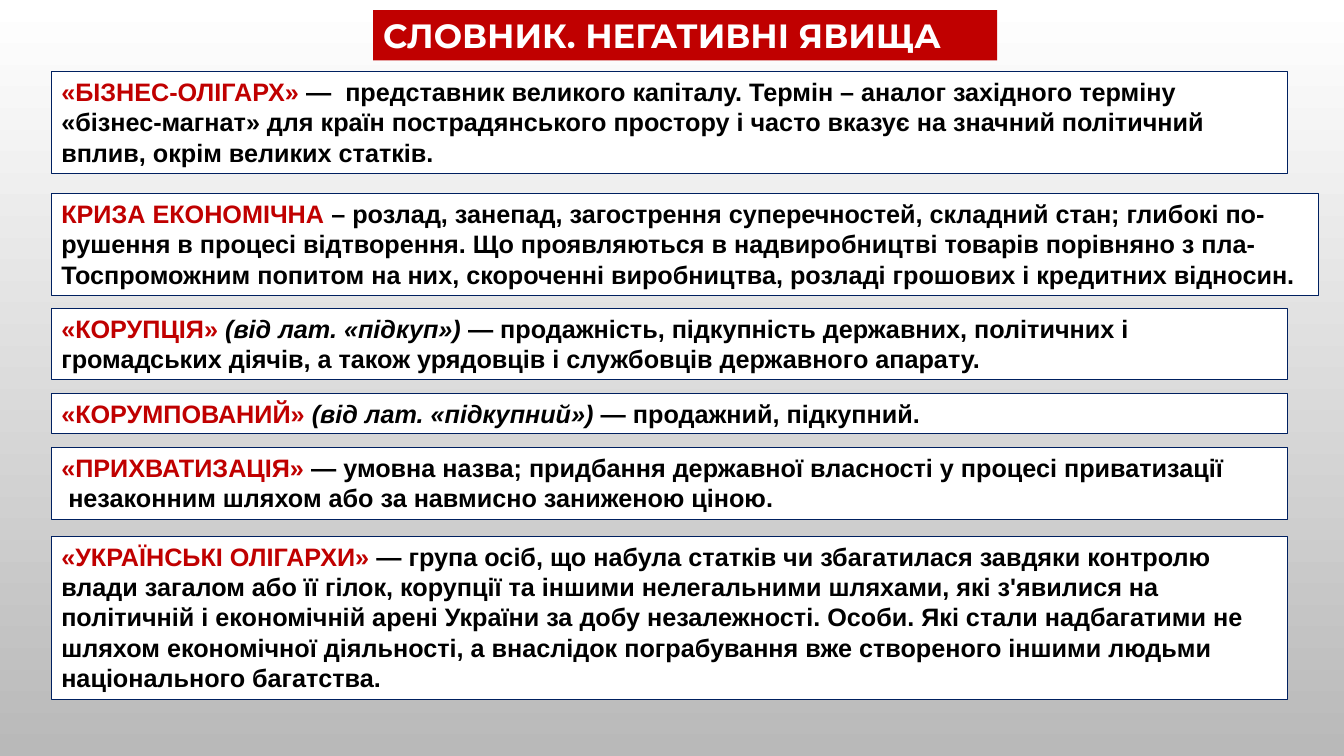
from dataclasses import dataclass

import pptx
import pptx.dml.color
import pptx.enum.shapes
import pptx.enum.text
import pptx.util

Inches = pptx.util.Inches
RGB = pptx.dml.color.RGBColor
WHITE = RGB(0xFF, 0xFF, 0xFF)
BLACK = RGB(0, 0, 0)
GREY = RGB(0xB9, 0xB9, 0xB9)
RED = RGB(0xC0, 0, 0)
NAVY = RGB(0, 0x20, 0x60)

LEFT = 0.51
WIDE = 12.26


@dataclass
class Entry:
    top: float
    high: float
    term: str
    lines: list[str]
    note: str = ""
    wide: float = WIDE


ENTRIES = [
    Entry(0.71, 1.01, "«БІЗНЕС-ОЛІГАРХ» ", [
        "—  представник великого капіталу. Термін – аналог західного терміну "
        "«бізнес-магнат» для країн пострадянського простору і часто вказує на "
        "значний політичний вплив, окрім великих статків."]),
    Entry(1.92, 1.01, "КРИЗА ЕКОНОМІЧНА ", [
        "– розлад, занепад, загострення суперечностей, складний стан; глибокі по-",
        "рушення в процесі відтворення. Що проявляються в надвиробництві "
        "товарів порівняно з пла-",
        "Тоспроможним попитом на них, скороченні виробництва, розладі "
        "грошових і кредитних відносин."], wide=12.57),
    Entry(3.06, 0.71, "«КОРУПЦІЯ» ", [
        "— продажність, підкупність державних, політичних і громадських "
        "діячів, а також урядовців і службовців державного апарату."],
        note="(від лат. «підкуп») "),
    Entry(3.9, 0.4, "«КОРУМПОВАНИЙ» ", ["— продажний, підкупний."],
          note="(від лат. «підкупний») "),
    Entry(4.44, 0.71, "«ПРИХВАТИЗАЦІЯ» ", [
        "— умовна назва; придбання державної власності у процесі приватизації",
        " незаконним шляхом або за навмисно заниженою ціною."]),
    Entry(5.32, 1.62, "«УКРАЇНСЬКІ ОЛІГАРХИ» ", [
        "— група осіб, що набула статків чи збагатилася завдяки контролю влади "
        "загалом або її гілок, корупції та іншими нелегальними шляхами, які "
        "з'явилися на політичній і економічній арені України за добу "
        "незалежності. Особи. Які стали надбагатими не шляхом економічної "
        "діяльності, а внаслідок пограбування вже створеного іншими людьми "
        "національного багатства."]),
]


def set_frame(frame) -> None:
    form = {
        "word_wrap": True,
        "auto_size": pptx.enum.text.MSO_AUTO_SIZE.NONE,
        "vertical_anchor": pptx.enum.text.MSO_ANCHOR.TOP,
        "margin_left": Inches(0.1), "margin_right": Inches(0.1),
        "margin_top": Inches(0.05), "margin_bottom": Inches(0.05),
    }
    for key, value in form.items():
        setattr(frame, key, value)


def add_run(para, text: str, color: RGB, face: str = "Arial",
            size: int = 18, slant: bool = False) -> None:
    run = para.add_run()
    run.text = text
    form = {"name": face, "size": pptx.util.Pt(size), "bold": True, "italic": slant}
    for key, value in form.items():
        setattr(run.font, key, value)
    run.font.color.rgb = color
    para.alignment = pptx.enum.text.PP_ALIGN.LEFT


def set_back(slide) -> None:
    fill = slide.background.fill
    fill.gradient()
    fill.gradient_angle = 270
    for stop, color in zip(fill.gradient_stops, (WHITE, GREY)):
        stop.color.rgb = color


def set_title(slide, text: str) -> None:
    title = slide.shapes.title
    place = {"left": 3.7, "top": 0.1, "width": 6.19, "height": 0.5}
    for key, value in place.items():
        setattr(title, key, Inches(value))
    title.fill.solid()
    title.fill.fore_color.rgb = RED
    set_frame(title.text_frame)
    add_run(title.text_frame.paragraphs[0], text, WHITE, "Montserrat", 24)


def add_entry(slide, entry: Entry) -> None:
    box = slide.shapes.add_shape(
        pptx.enum.shapes.MSO_SHAPE.RECTANGLE, Inches(LEFT), Inches(entry.top),
        Inches(entry.wide), Inches(entry.high))
    box.shadow.inherit = False
    box.fill.solid()
    box.fill.fore_color.rgb = WHITE
    box.line.color.rgb = NAVY
    box.line.width = pptx.util.Pt(0.75)
    frame = box.text_frame
    set_frame(frame)
    para = frame.paragraphs[0]
    add_run(para, entry.term, RED)
    if entry.note:
        add_run(para, entry.note, BLACK, slant=True)
    add_run(para, entry.lines[0], BLACK)
    for line in entry.lines[1:]:
        add_run(frame.add_paragraph(), line, BLACK)


def main() -> None:
    deck = pptx.Presentation()
    deck.slide_width = Inches(13.33)
    deck.slide_height = Inches(7.5)
    slide = deck.slides.add_slide(deck.slide_layouts[5])
    set_back(slide)
    set_title(slide, "СЛОВНИК. НЕГАТИВНІ ЯВИЩА")
    # Glossary boxes
    for entry in ENTRIES:
        add_entry(slide, entry)
    deck.save("out.pptx")


if __name__ == "__main__":
    main()
